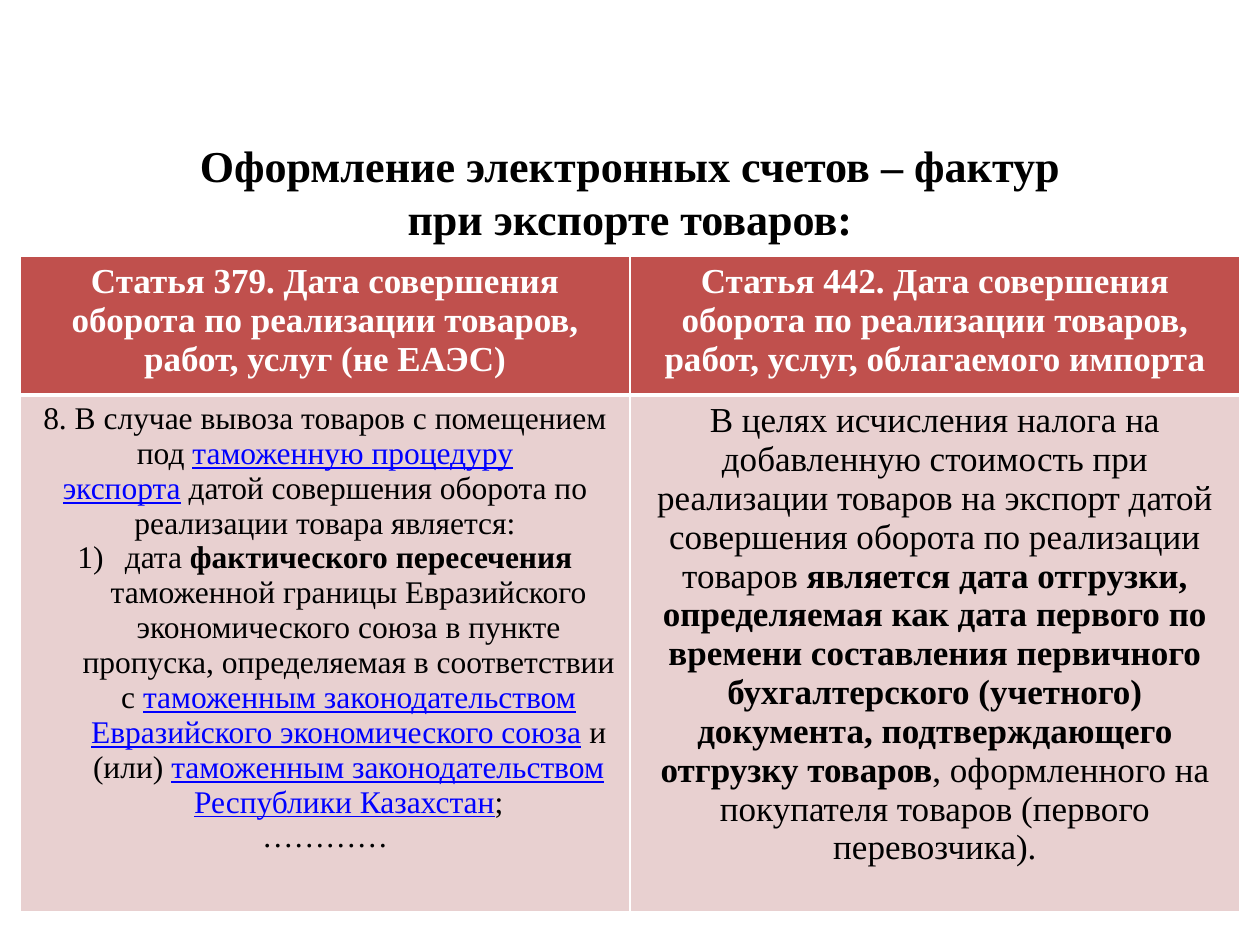
from lxml import etree
from pptx import Presentation
from pptx.dml import color
from pptx.enum import text
from pptx.oxml import ns
from pptx.util import Pt

HUES = {"ink": "000000", "white": "FFFFFF", "red": "C0504D", "pink": "E8D0D0", "link": "0000FF"}
FONT = "Times New Roman"
PLAIN = {"bold": False, "underline": False}
BOLD = {"bold": True, "underline": False}
LINK = {"bold": False, "underline": True}

TITLE = ["Оформление электронных счетов – фактур", "при экспорте товаров:"]
HEADS = [
    "Статья 379. Дата совершения оборота по реализации товаров, работ, услуг (не ЕАЭС)",
    "Статья 442. Дата совершения оборота по реализации товаров, работ, услуг, облагаемого импорта",
]
EXPORT = [
    [("8. В случае вывоза товаров с помещением под\u00a0", PLAIN),
     ("таможенную процедуру экспорта", LINK),
     ("\u00a0датой совершения оборота по реализации товара является:", PLAIN)],
    [("дата ", PLAIN), ("фактического пересечения ", BOLD),
     ("таможенной границы Евразийского экономического союза в пункте пропуска, "
      "определяемая в соответствии с\u00a0", PLAIN),
     ("таможенным законодательством Евразийского экономического союза", LINK),
     ("\u00a0и (или)\u00a0", PLAIN),
     ("таможенным законодательством Республики Казахстан", LINK), (";", PLAIN)],
    [("…………", PLAIN)],
]
SALE = [
    [("В целях исчисления налога на добавленную стоимость при реализации товаров на экспорт "
      "датой совершения оборота по реализации товаров ", PLAIN),
     ("является дата отгрузки, определяемая как дата первого по времени составления первичного "
      "бухгалтерского (учетного) документа, подтверждающего отгрузку товаров", BOLD),
     (", оформленного на покупателя товаров (первого перевозчика).", PLAIN)],
]


def add_run(para, words, size, hue, style):
    """Add one run with its font values."""
    run = para.add_run()
    run.text = words
    for name, value in {"name": FONT, "size": Pt(size), **style}.items():
        setattr(run.font, name, value)
    run.font.color.rgb = color.RGBColor.from_string(HUES[hue])


def indent(para, mark=None):
    """Give a paragraph a hanging indent and, if asked, a number."""
    props = para._p.get_or_add_pPr()
    props.set("marL", str(Pt(27)))
    props.set("indent", str(-Pt(27)))
    if mark:
        etree.SubElement(props, ns.qn("a:buFont"), typeface="+mj-lt")
        etree.SubElement(props, ns.qn("a:buAutoNum"), type=mark)


def add_edges(cell, widths):
    """Draw white cell edges with the given widths."""
    props = cell._tc.get_or_add_tcPr()
    for side, width in widths.items():
        line = etree.SubElement(props, ns.qn(f"a:ln{side}"), w=str(Pt(width)))
        fill = etree.SubElement(line, ns.qn("a:solidFill"))
        etree.SubElement(fill, ns.qn("a:srgbClr"), val=HUES["white"])


def fill_cell(cell, paras, size, hue, back, edges):
    """Write the paragraphs of a cell and paint it."""
    add_edges(cell, edges)
    cell.fill.solid()
    cell.fill.fore_color.rgb = color.RGBColor.from_string(HUES[back])
    frame = cell.text_frame
    for i, parts in enumerate(paras):
        para = frame.add_paragraph() if i else frame.paragraphs[0]
        para.alignment = text.PP_ALIGN.CENTER
        if i:
            indent(para, "arabicParenR" if i == 1 else None)
        for words, style in parts:
            add_run(para, words, size, hue, style)


def add_title(slide, x, y, w, h):
    """Place the two-line title in its box."""
    frame = slide.shapes.add_textbox(Pt(x), Pt(y), Pt(w), Pt(h)).text_frame
    frame.word_wrap = True
    frame.vertical_anchor = text.MSO_ANCHOR.MIDDLE
    para = frame.paragraphs[0]
    para.alignment = text.PP_ALIGN.CENTER
    para.line_spacing = Pt(30.3)
    for i, words in enumerate(TITLE):
        if i:
            para.add_line_break()
        add_run(para, words, 25.2, "ink", BOLD)


def add_grid(slide, x, y, w, h, top):
    """Place the table of the two articles, with a head row of height top."""
    grid = slide.shapes.add_table(2, 2, Pt(x), Pt(y), Pt(w), Pt(h)).table
    for row, high in zip(grid.rows, (top, h - top)):
        row.height = Pt(high)
    head = {"L": 1, "R": 1, "T": 1, "B": 3}
    body = {"L": 1, "R": 1, "T": 3, "B": 1}
    for i, (words, paras, size) in enumerate(zip(HEADS, (EXPORT, SALE), (18, 20))):
        grid.columns[i].width = Pt(w / 2)
        fill_cell(grid.cell(0, i), [[(words, BOLD)]], 20, "white", "red", head)
        fill_cell(grid.cell(1, i), paras, size, "ink", "pink", body)
        for para in grid.cell(1, i).text_frame.paragraphs:
            for run in para.runs:
                if run.font.underline:
                    run.font.color.rgb = color.RGBColor.from_string(HUES["link"])


def main():
    """Build and save the slide."""
    deck = Presentation()
    deck.slide_width, deck.slide_height = Pt(720), Pt(540)
    slide = deck.slides.add_slide(deck.slide_layouts[6])
    add_title(slide, 0, 78.5, 720, 62)
    add_grid(slide, 11.5, 146.5, 697, 359, 73.5)
    deck.save("out.pptx")


if __name__ == "__main__":
    main()
